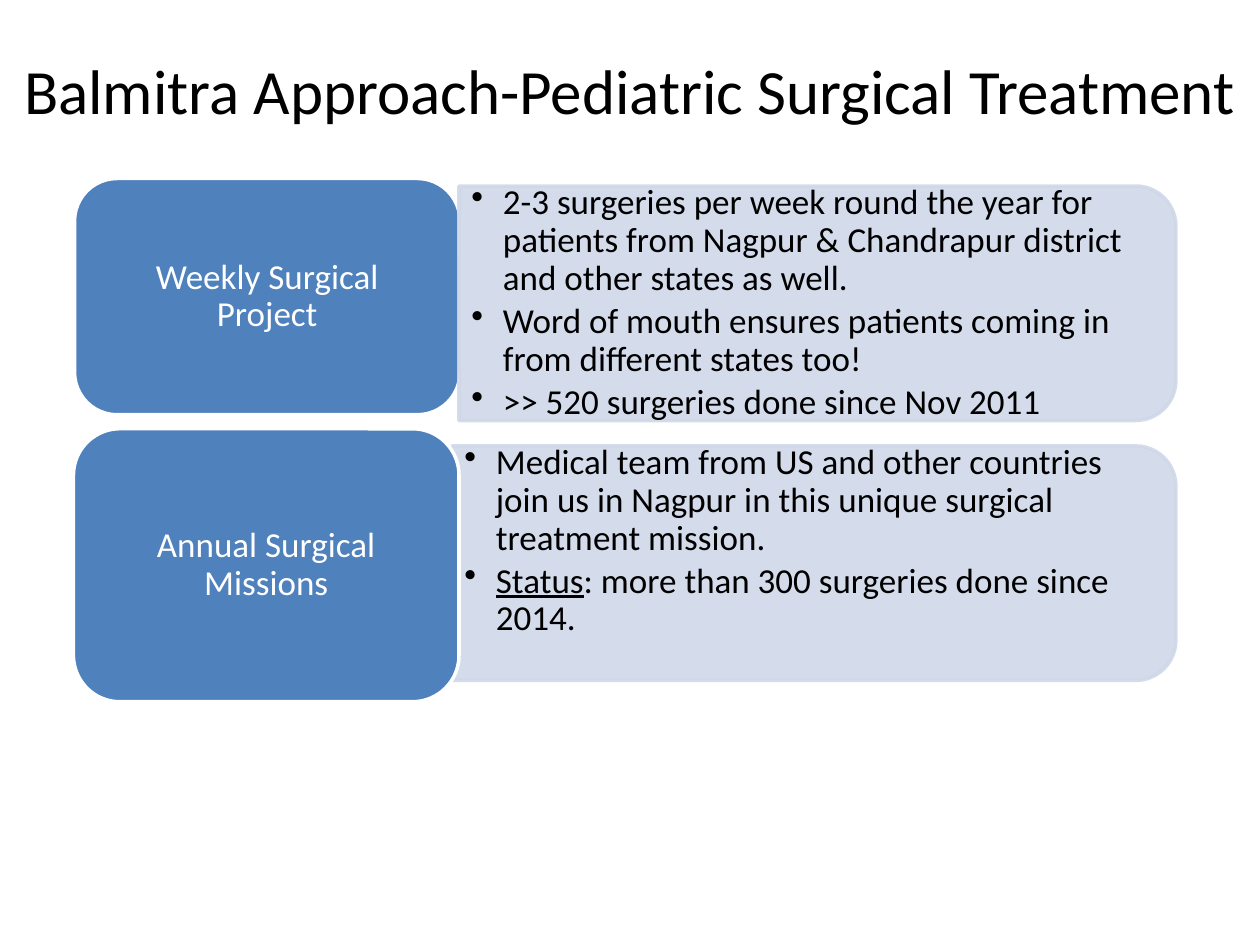
from dataclasses import dataclass
from math import cos, pi, sin

from lxml.etree import SubElement
from pptx import Presentation
from pptx.dml.color import RGBColor
from pptx.enum.shapes import MSO_SHAPE as Preset
from pptx.enum.text import MSO_ANCHOR as Anchor, PP_ALIGN as Align
from pptx.oxml.ns import qn
from pptx.util import Pt

FONT = "Calibri"
BLUE, PALE, WHITE, BLACK = "4F81BD", "D0D8E8", "FFFFFF", "000000"
PANEL_RIGHT, PANEL_HEIGHT, PANEL_RADIUS = 672, 134, 23
LABEL_WIDTH = 220.3
ARC_STEPS = 12


@dataclass
class Label:
    text: str
    left: float
    top: float
    height: float
    rounding: float


@dataclass
class Panel:
    bullets: list[list[tuple[str, bool]]]  # runs: text, underlined
    left: float
    top: float
    bottom_inset: float = 10


def color(hex_code: str) -> RGBColor:
    return RGBColor.from_string(hex_code)


def paint(shape, fill: str, line: str, opacity: int = 100) -> None:
    shape.shadow.inherit = False
    shape.line.width = Pt(2)
    for paint_format, tone in ((shape.fill, fill), (shape.line.fill, line)):
        paint_format.solid()
        paint_format.fore_color.rgb = color(tone)
    if opacity < 100:
        for tone in shape._element.spPr.iter(qn("a:srgbClr")):
            SubElement(tone, qn("a:alpha"), val=str(opacity * 1000))


def set_frame(frame, left: float, top: float, right: float, bottom: float) -> None:
    frame.word_wrap = True
    frame.vertical_anchor = Anchor.MIDDLE
    frame.margin_left, frame.margin_top = Pt(left), Pt(top)
    frame.margin_right, frame.margin_bottom = Pt(right), Pt(bottom)


def style(paragraph, size: float, tone: str, align: Align) -> None:
    paragraph.alignment = align
    paragraph.font.name = FONT
    paragraph.font.size = Pt(size)
    paragraph.font.color.rgb = color(tone)


def draw_label(shapes, label: Label) -> None:
    box = shapes.add_shape(Preset.ROUNDED_RECTANGLE, Pt(label.left), Pt(label.top),
                           Pt(LABEL_WIDTH), Pt(label.height))
    box.adjustments[0] = label.rounding
    paint(box, BLUE, WHITE)
    set_frame(box.text_frame, 14.4, 11.5, 14.4, 11.5)
    paragraph = box.text_frame.paragraphs[0]
    paragraph.text = label.text
    paragraph.line_spacing = 0.9
    style(paragraph, 20, WHITE, Align.CENTER)


def draw_panel(shapes, panel: Panel) -> None:
    # Square corners on the left, rounded ones on the right
    bottom = panel.top + PANEL_HEIGHT
    center_x = PANEL_RIGHT - PANEL_RADIUS
    outline = []
    for center_y, start in ((panel.top + PANEL_RADIUS, -pi / 2),
                            (bottom - PANEL_RADIUS, 0)):
        for step in range(ARC_STEPS + 1):
            angle = start + step / ARC_STEPS * pi / 2
            outline.append((Pt(center_x + PANEL_RADIUS * cos(angle)),
                            Pt(center_y + PANEL_RADIUS * sin(angle))))
    outline.append((Pt(panel.left), Pt(bottom)))
    builder = shapes.build_freeform(Pt(panel.left), Pt(panel.top))
    builder.add_line_segments(outline, close=True)
    area = builder.convert_to_shape()
    paint(area, PALE, PALE, opacity=90)

    # Bulleted list
    frame = area.text_frame
    set_frame(frame, 7.2, 10, 13.7, panel.bottom_inset)
    for index, runs in enumerate(panel.bullets):
        paragraph = frame.add_paragraph() if index else frame.paragraphs[0]
        properties = paragraph._p.get_or_add_pPr()
        properties.set("marL", str(Pt(18)))
        properties.set("indent", str(Pt(-18)))
        SubElement(properties, qn("a:buChar"), char="•")
        paragraph.line_spacing = 0.9
        paragraph.space_after = Pt(3)
        style(paragraph, 20, BLACK, Align.LEFT)
        for text, underlined in runs:
            run = paragraph.add_run()
            run.text = text
            if underlined:
                run.font.underline = True


def main() -> None:
    deck = Presentation()
    deck.slide_width, deck.slide_height = Pt(720), Pt(540)
    slide = deck.slides.add_slide(deck.slide_layouts[5])
    shapes = slide.shapes

    # Title
    title = shapes.title
    title.left, title.top, title.width, title.height = Pt(0), Pt(24), Pt(720), Pt(54)
    title.text_frame.text = "Balmitra Approach-Pediatric Surgical Treatment"
    set_frame(title.text_frame, 7.2, 3.6, 7.2, 3.6)
    style(title.text_frame.paragraphs[0], 36, BLACK, Align.CENTER)

    # Annual missions: the label overlaps its panel
    draw_panel(shapes, Panel([
        [("Medical team from US and other countries join us in Nagpur "
          "in this unique surgical treatment mission.", False)],
        [("Status", True), (": more than 300 surgeries done since 2014.", False)],
    ], left=258.3, top=254.8, bottom_inset=35))
    draw_label(shapes, Label("Annual Surgical Missions", 42, 245, 156, 0.17))

    # Weekly project: the panel overlaps its label
    draw_label(shapes, Label("Weekly Surgical Project", 42.6, 102, 135, 0.18))
    draw_panel(shapes, Panel([
        [("2-3 surgeries per week round the year for patients from Nagpur "
          "& Chandrapur district and other states as well.", False)],
        [("Word of mouth ensures patients coming in from different states too!", False)],
        [(">> 520 surgeries done since Nov 2011", False)],
    ], left=262.3, top=106.3))

    deck.save("out.pptx")


if __name__ == "__main__":
    main()
